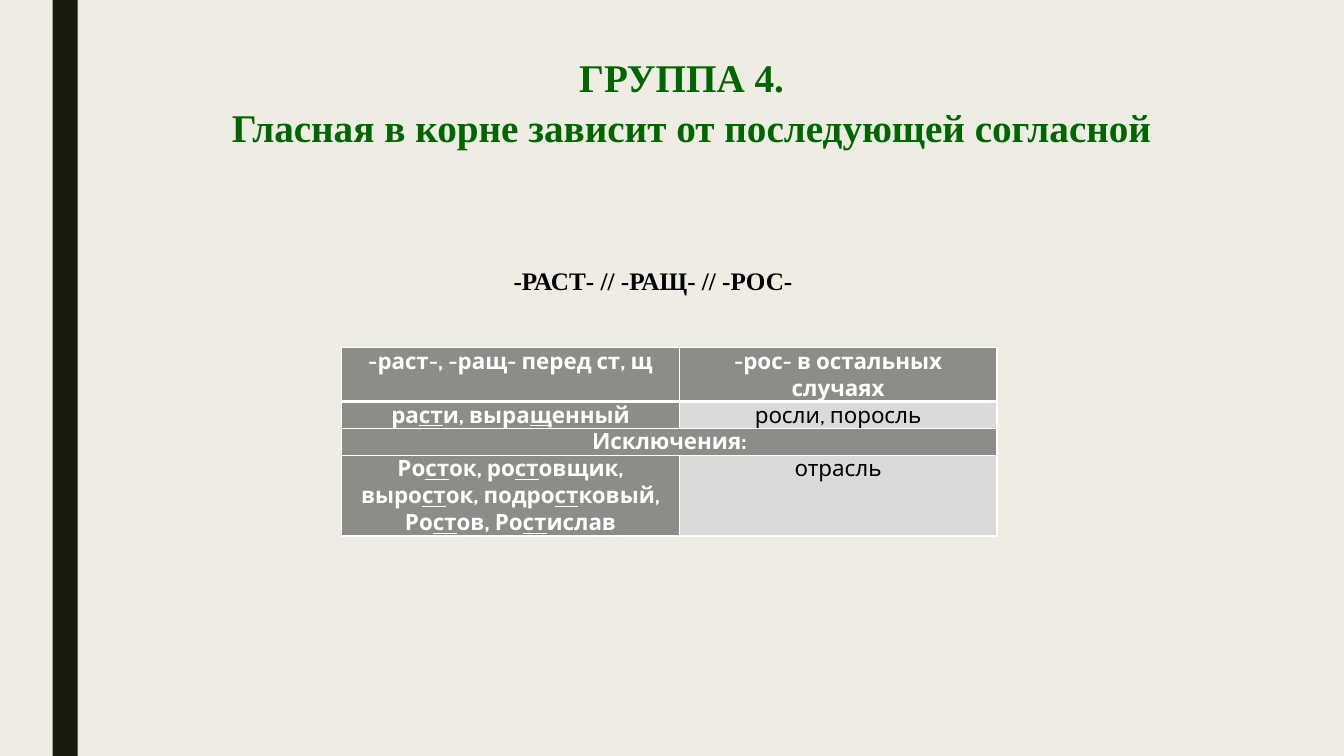
"""Build a slide on root vowels that depend on the following consonant."""
from lxml.etree import SubElement
from pptx import Presentation
from pptx.dml.color import RGBColor
from pptx.enum.shapes import MSO_SHAPE as SHAPE
from pptx.enum.text import PP_ALIGN as ALIGN
from pptx.oxml.ns import qn
from pptx.util import Pt

CREAM = RGBColor(0xEF, 0xED, 0xE3)
DARK = RGBColor(0x19, 0x1B, 0x0E)
GREEN = RGBColor(0x00, 0x66, 0x00)
BLACK = RGBColor(0, 0, 0)
WHITE = RGBColor(0xFF, 0xFF, 0xFF)
GREY = RGBColor(0x8C, 0x8D, 0x86)
LIGHT = RGBColor(0xDA, 0xDB, 0xD9)

SERIF, SANS = "Times New Roman", "Cabin"
TITLE = [("ГРУППА 4.", 40), ("Гласная в корне зависит от последующей согласной", 54)]
ROOTS = [("-РАСТ- // -РАЩ- // -РОС-", 54)]
ROWS = [
    ("-раст-, -ращ- перед ст, щ", "-рос- в остальных случаях"),
    ("ра_ст_и, выра_щ_енный", "росли, поросль"),
    ("Исключения:",),
    ("Ро_ст_ок, ро_ст_овщик, выро_ст_ок, подро_ст_ковый, Ро_ст_ов, Ро_ст_ислав", "отрасль"),
]
COL_WIDTHS = (241.2, 226.8)
ROW_LINES = (2, 1, 1, 3)
LINE_HEIGHT = 19.2


def write(p, text, size, font, color, bold=True):
    """Write centred text, underlining the parts between underscores."""
    p.alignment = ALIGN.CENTER
    for i, part in enumerate(text.split("_")):
        r = p.add_run()
        r.text = part
        r.font.size, r.font.name, r.font.bold = Pt(size), font, bold
        r.font.color.rgb = color
        r.font.underline = i % 2 == 1


def add_heading(slide, box, lines, size, color):
    """Add a text box with one indented paragraph per line."""
    tf = slide.shapes.add_textbox(*map(Pt, box)).text_frame
    tf.word_wrap = True
    for i, (text, indent) in enumerate(lines):
        p = tf.add_paragraph() if i else tf.paragraphs[0]
        p.line_spacing = 1.05
        p._p.get_or_add_pPr().set("marL", str(Pt(indent)))
        write(p, text, size, SERIF, color)


def style_cell(cell, fill, top, bottom):
    """Set margins, white borders and fill of a cell."""
    cell.margin_left = cell.margin_right = Pt(5)
    cell.margin_top = cell.margin_bottom = 0
    tcPr = cell._tc.get_or_add_tcPr()
    for side, width in (("L", 1), ("R", 1), ("T", top), ("B", bottom)):
        ln = SubElement(tcPr, qn(f"a:ln{side}"), w=str(Pt(width)))
        SubElement(SubElement(ln, qn("a:solidFill")), qn("a:srgbClr"), val=str(WHITE))
    cell.fill.solid()
    cell.fill.fore_color.rgb = fill


def add_rules(slide):
    """Add the table of spelling rules."""
    heights = [n * LINE_HEIGHT for n in ROW_LINES]
    table = slide.shapes.add_table(
        len(ROWS), len(COL_WIDTHS), Pt(244.1), Pt(248.4),
        Pt(sum(COL_WIDTHS)), Pt(sum(heights))).table
    for col, width in zip(table.columns, COL_WIDTHS):
        col.width = Pt(width)
    for i, (texts, height) in enumerate(zip(ROWS, heights)):
        table.rows[i].height = Pt(height)
        if len(texts) == 1:
            table.cell(i, 0).merge(table.cell(i, 1))
        for j in range(len(COL_WIDTHS)):
            strong = i == 0 or j == 0 or len(texts) == 1
            cell = table.cell(i, j)
            style_cell(cell, GREY if strong else LIGHT,
                       3 if i == 1 else 1, 3 if i == 0 else 1)
            if j < len(texts):
                write(cell.text_frame.paragraphs[0], texts[j], 16, SANS,
                      WHITE if strong else BLACK, strong)


def main():
    """Assemble and save the slide."""
    prs = Presentation()
    prs.slide_width, prs.slide_height = Pt(960), Pt(540)
    slide = prs.slides.add_slide(prs.slide_layouts[6])
    slide.background.fill.solid()
    slide.background.fill.fore_color.rgb = CREAM
    bar = slide.shapes.add_shape(SHAPE.RECTANGLE, Pt(37.5), 0, Pt(18), Pt(540))
    bar.shadow.inherit = False
    bar.fill.solid()
    bar.fill.fore_color.rgb = DARK
    bar.line.fill.background()
    add_heading(slide, (82.8, 33.1, 768.2, 74.9), TITLE, 28, GREEN)
    add_heading(slide, (199.4, 185, 480.2, 28.8), ROOTS, 18, BLACK)
    add_rules(slide)
    prs.save("out.pptx")


if __name__ == "__main__":
    main()
